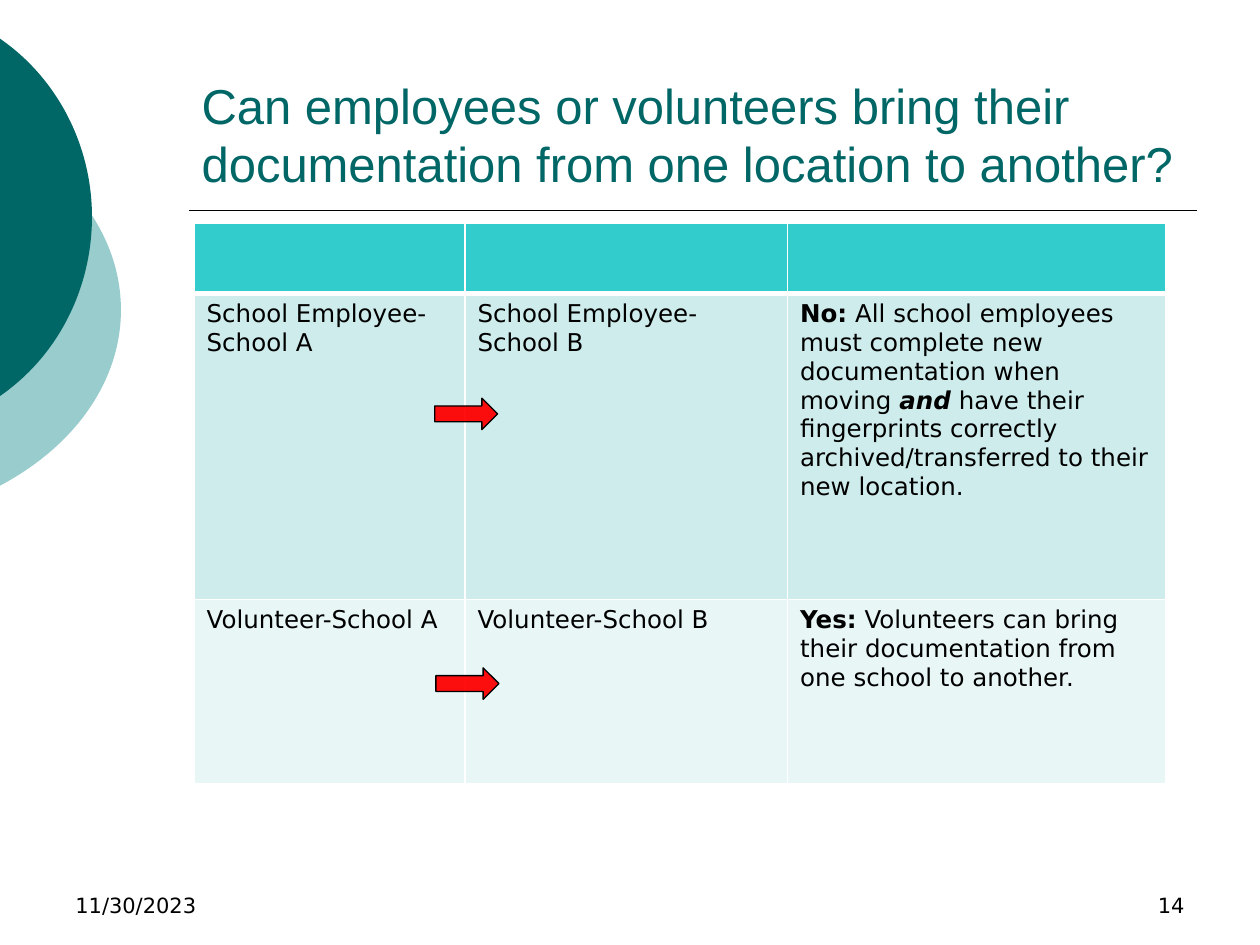
from dataclasses import dataclass

from lxml.etree import SubElement
from pptx import Presentation
from pptx.dml.color import RGBColor
from pptx.enum.shapes import MSO_CONNECTOR, MSO_SHAPE
from pptx.enum.text import MSO_ANCHOR, MSO_AUTO_SIZE, PP_ALIGN
from pptx.oxml.ns import qn
from pptx.util import Inches, Pt

TEAL = RGBColor(0x00, 0x66, 0x66)
PALE_TEAL = RGBColor(0x99, 0xCC, 0xCC)
HEADER_FILL = RGBColor(0x33, 0xCC, 0xCC)
ROW_FILLS = (HEADER_FILL, RGBColor(0xCE, 0xEC, 0xEC), RGBColor(0xE8, 0xF6, 0xF6))
RED = RGBColor(0xFF, 0x00, 0x00)
BLACK = RGBColor(0x00, 0x00, 0x00)
WHITE = RGBColor(0xFF, 0xFF, 0xFF)
TITLE_FONT = "Arial"
BODY_FONT = "DejaVu Sans"


@dataclass(frozen=True)
class Disc:
    """Visible part of a disc that the slide's left edge cuts off."""
    frame: tuple[float, float, float, float]  # left, top, right, bottom
    curve: tuple[tuple[float, float], ...]  # start, then three points per curve
    color: RGBColor


@dataclass(frozen=True)
class Words:
    text: str
    bold: bool = False
    italic: bool = False


@dataclass(frozen=True)
class Footer:
    text: str
    left: float
    alignment: PP_ALIGN


DISCS = (
    Disc((-3.54, 0.75, 0.96, 4.17),
         ((-0.01, 1.06), (0.6, 1.38), (0.96, 1.9), (0.96, 2.46),
          (0.96, 3.02), (0.6, 3.54), (-0.01, 3.86)), PALE_TEAL),
    Disc((-2.65, 0, 0.73, 3.45),
         ((-0.01, 0.3), (0.46, 0.62), (0.73, 1.16), (0.73, 1.72),
          (0.73, 2.29), (0.46, 2.83), (-0.01, 3.15)), TEAL),
)
COLUMN_WIDTHS = (2.15, 2.56, 3)
ROW_HEIGHTS = (0.56, 2.43, 1.46)
ROWS = (
    ((), (), ()),
    (
        (Words("School Employee- School A"),),
        (Words("School Employee-School B"),),
        (
            Words("No:", bold=True),
            Words(" All school employees must complete new documentation when moving "),
            Words("and", bold=True, italic=True),
            Words(" have their fingerprints correctly archived/transferred to their new location."),
        ),
    ),
    (
        (Words("Volunteer-School A"),),
        (Words("Volunteer-School B"),),
        (
            Words("Yes:", bold=True),
            Words(" Volunteers can bring their documentation from one school to another."),
        ),
    ),
)
ARROW_POSITIONS = ((3.45, 3.16), (3.46, 5.3))
FOOTERS = (
    Footer("14", 7.17, PP_ALIGN.RIGHT),
    Footer("11/30/2023", 0.5, PP_ALIGN.LEFT),
)


def draw_disc(slide, disc: Disc) -> None:
    left, top, right, bottom = map(Inches, disc.frame)
    start, *controls = [(Inches(x), Inches(y)) for x, y in disc.curve]
    # The first two moves only stretch the frame to the whole disc
    builder = slide.shapes.build_freeform(left, top)
    builder.move_to(right, bottom)
    builder.move_to(*start)
    builder.add_line_segments(controls, close=True)
    shape = builder.convert_to_shape()

    # Turn each three line points into one cubic curve
    outline = next(shape.element.iter(qn("a:path")))
    for move in outline.findall(qn("a:moveTo"))[:2]:
        outline.remove(move)
    lines = outline.findall(qn("a:lnTo"))
    close = outline.find(qn("a:close"))
    for first in range(0, len(controls), 3):
        curve = SubElement(outline, qn("a:cubicBezTo"))
        for line in lines[first:first + 3]:
            curve.append(line.find(qn("a:pt")))
            outline.remove(line)
    outline.append(close)

    shape.shadow.inherit = False
    shape.fill.solid()
    shape.fill.fore_color.rgb = disc.color
    shape.line.fill.background()


def draw_rule(slide) -> None:
    rule = slide.shapes.add_connector(
        MSO_CONNECTOR.STRAIGHT, Inches(1.5), Inches(1.67), Inches(9.5), Inches(1.67))
    rule.line.color.rgb = BLACK
    rule.line.width = Pt(1)
    SubElement(rule.element.spPr, qn("a:effectLst"))


def format_title(slide) -> None:
    title = slide.shapes.title
    title.left, title.top = Inches(1.5), Inches(0.33)
    title.width, title.height = Inches(8), Inches(1.25)
    frame = title.text_frame
    frame.text = "Can employees or volunteers bring their documentation from one location to another?"
    frame.word_wrap = True
    frame.auto_size = MSO_AUTO_SIZE.NONE
    frame.vertical_anchor = MSO_ANCHOR.BOTTOM
    paragraph = frame.paragraphs[0]
    paragraph.alignment = PP_ALIGN.LEFT
    format_run(paragraph.runs[0], 28, TITLE_FONT, TEAL)


def format_run(run, size: float, name: str, color: RGBColor) -> None:
    run.font.size = Pt(size)
    run.font.name = name
    run.font.color.rgb = color


def set_borders(cell, bottom_width: float) -> None:
    properties = cell._tc.get_or_add_tcPr()
    for side, width in (("L", 1), ("R", 1), ("T", 1), ("B", bottom_width)):
        line = SubElement(properties, qn(f"a:ln{side}"), w=str(Pt(width)))
        fill = SubElement(line, qn("a:solidFill"))
        SubElement(fill, qn("a:srgbClr"), val=str(WHITE))


def draw_table(slide) -> None:
    table = slide.shapes.add_table(
        len(ROWS), len(COLUMN_WIDTHS), Inches(1.54), Inches(1.77),
        Inches(sum(COLUMN_WIDTHS)), Inches(sum(ROW_HEIGHTS))).table
    for column, width in zip(table.columns, COLUMN_WIDTHS):
        column.width = Inches(width)
    for row_index, contents in enumerate(ROWS):
        table.rows[row_index].height = Inches(ROW_HEIGHTS[row_index])
        for column_index, passage in enumerate(contents):
            cell = table.cell(row_index, column_index)
            set_borders(cell, bottom_width=3 if row_index == 0 else 1)
            cell.fill.solid()
            cell.fill.fore_color.rgb = ROW_FILLS[row_index]
            for words in passage:
                run = cell.text_frame.paragraphs[0].add_run()
                run.text = words.text
                format_run(run, 14, BODY_FONT, BLACK)
                run.font.bold = words.bold
                run.font.italic = words.italic


def draw_arrow(slide, left: float, top: float) -> None:
    arrow = slide.shapes.add_shape(
        MSO_SHAPE.RIGHT_ARROW, Inches(left), Inches(top), Inches(0.5), Inches(0.25))
    arrow.shadow.inherit = False
    arrow.fill.solid()
    arrow.fill.fore_color.rgb = RED
    color = arrow.element.spPr.find(qn("a:solidFill")).find(qn("a:srgbClr"))
    SubElement(color, qn("a:alpha"), val="94000")
    arrow.line.color.rgb = BLACK
    arrow.line.width = Pt(0.75)


def draw_footer(slide, footer: Footer) -> None:
    box = slide.shapes.add_textbox(
        Inches(footer.left), Inches(6.83), Inches(2.33), Inches(0.5))
    frame = box.text_frame
    frame.text = footer.text
    frame.word_wrap = True
    frame.vertical_anchor = MSO_ANCHOR.BOTTOM
    paragraph = frame.paragraphs[0]
    paragraph.alignment = footer.alignment
    format_run(paragraph.runs[0], 12, BODY_FONT, BLACK)


def main() -> None:
    presentation = Presentation()
    presentation.slide_width, presentation.slide_height = Inches(10), Inches(7.5)
    slide = presentation.slides.add_slide(presentation.slide_layouts[5])

    # Backdrop and heading
    for disc in DISCS:
        draw_disc(slide, disc)
    draw_rule(slide)
    format_title(slide)

    # Transfer rules, with arrows from school A to school B
    draw_table(slide)
    for left, top in ARROW_POSITIONS:
        draw_arrow(slide, left, top)

    # Page number and date
    for footer in FOOTERS:
        draw_footer(slide, footer)
    presentation.save("out.pptx")


if __name__ == "__main__":
    main()
